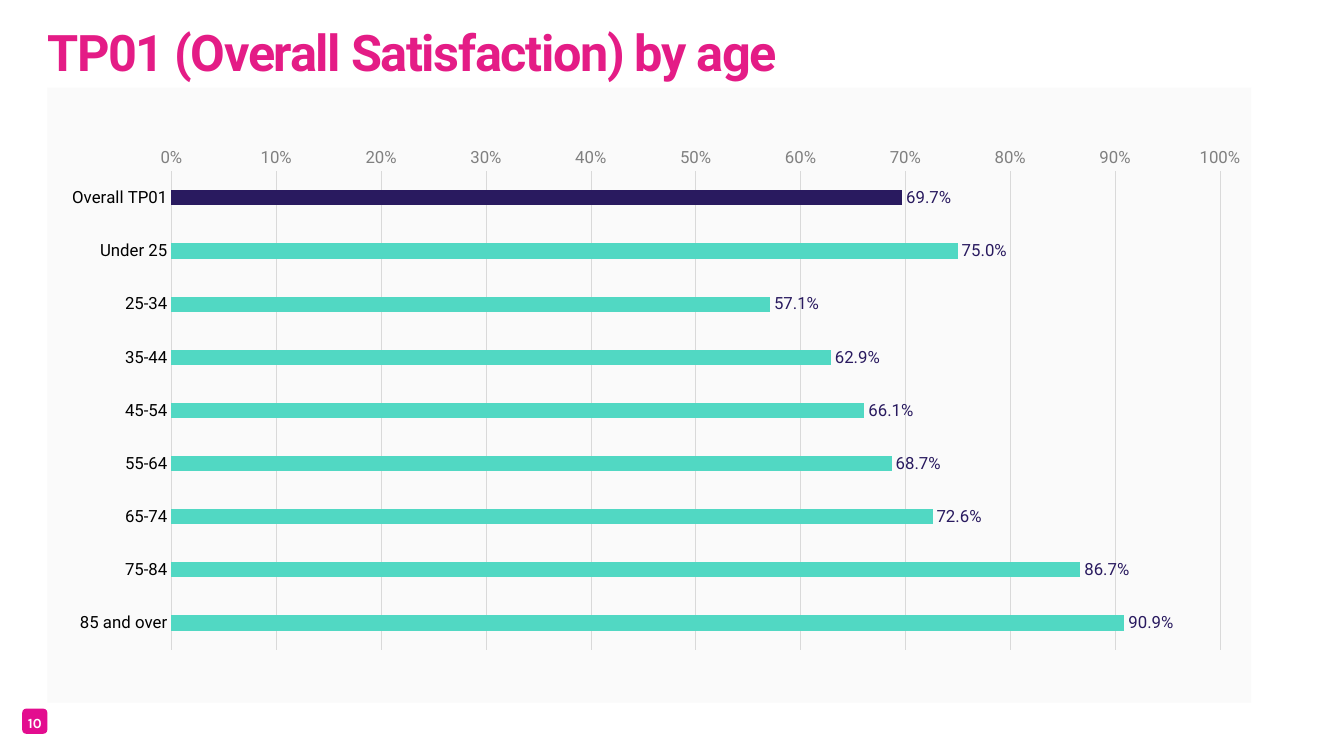
from lxml import etree
from pptx import Presentation
from pptx.chart.data import CategoryChartData
from pptx.dml.color import RGBColor
from pptx.enum.chart import XL_CHART_TYPE as CT, XL_LABEL_POSITION as LP, XL_TICK_MARK as TM
from pptx.enum.shapes import MSO_SHAPE as MS
from pptx.enum.text import MSO_ANCHOR as ANCHOR, MSO_AUTO_SIZE as AUTO, PP_ALIGN as ALIGN
from pptx.oxml import parse_xml
from pptx.oxml.ns import nsdecls, qn
from pptx.util import Inches, Pt

NAVY, TEAL, PANEL = "291A5F", "51D8C3", "FAFAFA"
SATISFACTION = {
    "Overall TP01": 0.697, "Under 25": 0.75, "25-34": 0.571,
    "35-44": 0.629, "45-54": 0.661, "55-64": 0.687,
    "65-74": 0.726, "75-84": 0.867, "85 and over": 0.909,
}
PLOT = {"x": 0.103, "y": 0.136, "w": 0.871, "h": 0.778}


def rgb(color):
    """Turn a hex string into a colour."""
    return RGBColor.from_string(color)


def set_font(font, name, size, color, bold=False):
    """Format a font."""
    font.name, font.size, font.bold = name, Pt(size), bold
    font.color.rgb = rgb(color)


def set_text(tf, text, align, line, font, size, color):
    """Write one bold line without insets and return its run."""
    tf.text = text
    tf.word_wrap = True
    tf.auto_size = AUTO.SHAPE_TO_FIT_TEXT
    tf.margin_left = tf.margin_right = tf.margin_top = tf.margin_bottom = 0
    p = tf.paragraphs[0]
    p.alignment, p.line_spacing = align, Pt(line)
    r = p.runs[0]
    set_font(r.font, font, size, color, True)
    return r


def add_title(s, x, y, w, h):
    """Place the slide title."""
    sp = s.shapes.title
    sp.left, sp.top, sp.width, sp.height = map(Inches, (x, y, w, h))
    tf = sp.text_frame
    r = set_text(tf, "TP01 (Overall Satisfaction) by age", ALIGN.LEFT, 60, "Roboto", 36, "E41C86")
    tf.vertical_anchor = ANCHOR.BOTTOM
    r.font._element.set("spc", "-100")


def add_page_number(s, x, y, size):
    """Draw the rounded page badge with its number."""
    group = s.shapes.add_group_shape()
    sp = group.shapes.add_shape(MS.ROUNDED_RECTANGLE, *map(Inches, (x, y, size, size)))
    sp.shadow.inherit = False
    sp.fill.solid()
    sp.fill.fore_color.rgb = rgb("E30D8F")
    sp.line.fill.background()
    box = group.shapes.add_textbox(*map(Inches, (x, y + 0.06, size, 0.13)))
    set_text(box.text_frame, "10", ALIGN.CENTER, 12, "Karla", 10, "FFFFFF")


def set_panel_and_layout(chart):
    """Fill the chart background and fix the inner plot area."""
    space = chart._chartSpace
    space.find(qn("c:chart")).addnext(parse_xml(
        f'<c:spPr {nsdecls("c", "a")}><a:solidFill><a:srgbClr val="{PANEL}"/></a:solidFill>'
        '<a:ln><a:noFill/></a:ln></c:spPr>'))
    plot_area = space.find(".//" + qn("c:plotArea"))
    for old in plot_area.findall(qn("c:layout")):
        plot_area.remove(old)
    layout = parse_xml(f'<c:layout {nsdecls("c")}><c:manualLayout/></c:layout>')
    settings = {"layoutTarget": "inner", "xMode": "edge", "yMode": "edge", **PLOT}
    for tag, value in settings.items():
        etree.SubElement(layout[0], qn("c:" + tag)).set("val", str(value))
    plot_area.insert(0, layout)


def format_axis(axis, color):
    """Hide an axis line and ticks and format its labels."""
    axis.major_tick_mark = axis.minor_tick_mark = TM.NONE
    axis.format.line.fill.background()
    set_font(axis.tick_labels.font, "Roboto", 12, color)


def add_age_chart(s, x, y, w, h):
    """Draw satisfaction by age as horizontal bars."""
    data = CategoryChartData(number_format="0.0%")
    data.categories = list(SATISFACTION)
    data.add_series("Series 1", list(SATISFACTION.values()))
    chart = s.shapes.add_chart(CT.BAR_CLUSTERED, *map(Inches, (x, y, w, h)), data).chart
    chart.has_legend = chart.has_title = False
    set_font(chart.font, "Roboto", 10, NAVY)
    set_panel_and_layout(chart)

    ages, share = chart.category_axis, chart.value_axis
    format_axis(ages, "000000")
    ages.reverse_order = True
    format_axis(share, "808080")
    share.minimum_scale, share.maximum_scale, share.major_unit = 0, 1, 0.1
    share.tick_labels.number_format = "0%"
    share.tick_labels.number_format_is_linked = False
    grid = share.major_gridlines.format.line
    grid.color.rgb = rgb("D9D9D9")
    grid.width = Pt(0.25)

    plot = chart.plots[0]
    plot.gap_width, plot.vary_by_categories = 250, False
    series = plot.series[0]
    series.invert_if_negative = False
    for part, color in ((series, TEAL), (series.points[0], NAVY)):
        part.format.fill.solid()
        part.format.fill.fore_color.rgb = rgb(color)
    labels = series.data_labels
    labels.show_value = True
    labels.position = LP.OUTSIDE_END
    labels.number_format, labels.number_format_is_linked = "0.0%", False
    set_font(labels.font, "Roboto", 12, NAVY)


def main():
    """Build and save the slide."""
    prs = Presentation()
    prs.slide_width, prs.slide_height = Inches(13.33), Inches(7.5)
    s = prs.slides.add_slide(prs.slide_layouts[5])
    add_page_number(s, 0.22, 7.03, 0.25)
    add_title(s, 0.47, 0.03, 11.17, 0.78)
    add_age_chart(s, 0.47, 0.87, 11.94, 6.1)
    prs.save("out.pptx")


if __name__ == "__main__":
    main()
